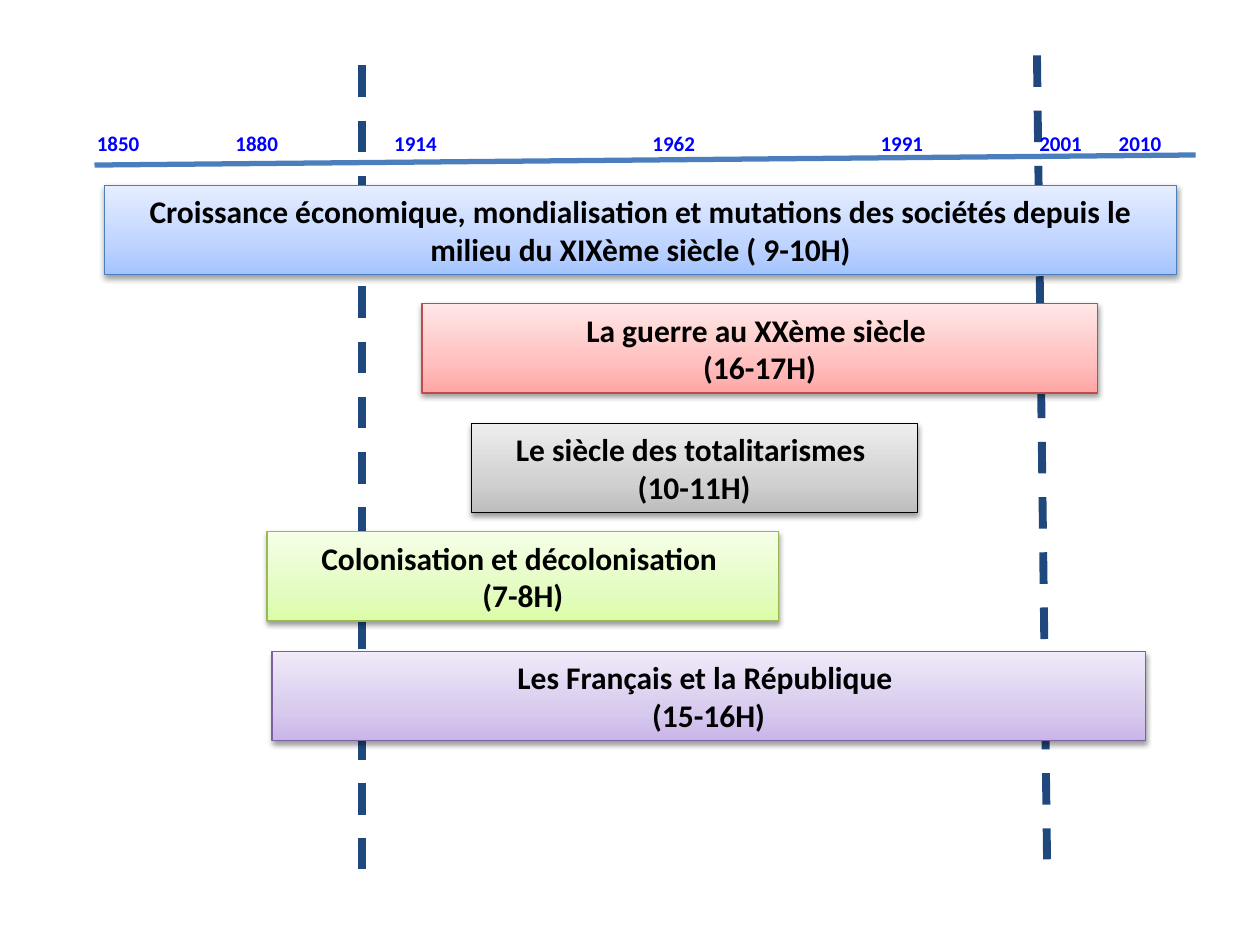
from copy import deepcopy

from lxml.etree import SubElement
from pptx import Presentation
from pptx.dml.color import RGBColor
from pptx.enum.dml import MSO_LINE
from pptx.enum.shapes import MSO_CONNECTOR, MSO_SHAPE
from pptx.enum.text import MSO_ANCHOR, MSO_AUTO_SIZE, PP_ALIGN
from pptx.oxml.ns import qn
from pptx.util import Inches, Pt

YEARS = [("1850", 0.67), ("1880", 1.77), ("1914", 3.03), ("1962", 5.08),
         ("1991", 6.89), ("2001", 8.15), ("2010", 8.78)]

# left, top, width, outline, gradient from bottom to top, lines of text
THEMES = [
    (0.83, 1.47, 8.51, "4B7EBC", ("A4C4FF", "BFD4FF", "E6EEFF"),
     ["Croissance économique, mondialisation et mutations des sociétés "
      "depuis le milieu du XIXème siècle ( 9-10H)"]),
    (3.35, 2.41, 5.36, "BF4C48", ("FFA6A5", "FFC0BF", "FFE7E7"),
     ["La guerre au XXème siècle ", "(16-17H)"]),
    (3.74, 3.36, 3.54, "000000", ("BDBDBD", "D1D1D1", "EEEEEE"),
     ["Le siècle des totalitarismes ", "(10-11H)"]),
    (2.12, 4.22, 4.06, "98B955", ("DAFDA7", "E4FCC2", "F5FFE7"),
     ["Colonisation et décolonisation ", "(7-8H)"]),
    (2.16, 5.17, 6.93, "7D60A0", ("C9B5E8", "D8CBEE", "F0EAF9"),
     ["Les Français et la République ", "(15-16H)"]),
]


def rgb(code):
    return RGBColor.from_string(code)


def write(frame, lines, size, color, align):
    frame.word_wrap = True
    frame.auto_size = MSO_AUTO_SIZE.SHAPE_TO_FIT_TEXT
    for i, text in enumerate(lines):
        para = frame.add_paragraph() if i else frame.paragraphs[0]
        para.text = text
        para.alignment = align
        font = para.font
        font.name, font.size, font.bold = "Calibri", Pt(size), True
        font.color.rgb = rgb(color)


def add_line(slide, start, end, color, width, dash=None):
    x1, y1, x2, y2 = map(Inches, start + end)
    line = slide.shapes.add_connector(MSO_CONNECTOR.STRAIGHT, x1, y1, x2, y2)
    line.line.color.rgb = rgb(color)
    line.line.width = Pt(width)
    if dash:
        line.line.dash_style = dash
    SubElement(line._element.spPr, qn("a:effectLst"))


def shade(fill, colors):
    """Fill upwards with three colours."""
    fill.gradient()
    fill.gradient_angle = 90
    first = fill.gradient_stops[0]._gs
    first.addnext(deepcopy(first))
    for stop, place, color in zip(fill.gradient_stops, (0, 0.35, 1), colors):
        stop.position = place
        stop.color.rgb = rgb(color)


def cast(shape):
    """Add a soft shadow straight below."""
    shape.shadow.inherit = False
    effects = shape._element.spPr.find(qn("a:effectLst"))
    shadow = SubElement(effects, qn("a:outerShdw"), blurRad=str(Pt(3.1)),
                        dist=str(Pt(1.6)), dir="5400000", rotWithShape="0")
    black = SubElement(shadow, qn("a:srgbClr"), val="000000")
    SubElement(black, qn("a:alpha"), val="38000")


def add_theme(slide, left, top, width, edge, colors, lines):
    box = slide.shapes.add_shape(MSO_SHAPE.RECTANGLE, Inches(left), Inches(top),
                                 Inches(width), Inches(0.71))
    shade(box.fill, colors)
    box.line.color.rgb = rgb(edge)
    box.line.width = Pt(0.75)
    cast(box)
    box.text_frame.vertical_anchor = MSO_ANCHOR.MIDDLE
    write(box.text_frame, lines, 18, "000000", PP_ALIGN.CENTER)


def add_year(slide, year, left):
    box = slide.shapes.add_textbox(Inches(left), Inches(0.99),
                                   Inches(0.79), Inches(0.31))
    write(box.text_frame, [year], 12, "0000FF", PP_ALIGN.LEFT)


def main():
    deck = Presentation()
    deck.slide_width, deck.slide_height = Inches(10), Inches(7.5)
    slide = deck.slides.add_slide(deck.slide_layouts[6])
    add_line(slide, (8.23, 0.44), (8.31, 6.82), "1F497D", 4.5, MSO_LINE.DASH)
    add_line(slide, (2.87, 0.52), (2.87, 6.9), "1F497D", 4.5, MSO_LINE.DASH)
    for theme in THEMES:
        add_theme(slide, *theme)
    add_line(slide, (0.75, 1.31), (9.49, 1.23), "4B7EBC", 3)
    for year, left in YEARS:
        add_year(slide, year, left)
    deck.save("out.pptx")


if __name__ == "__main__":
    main()
